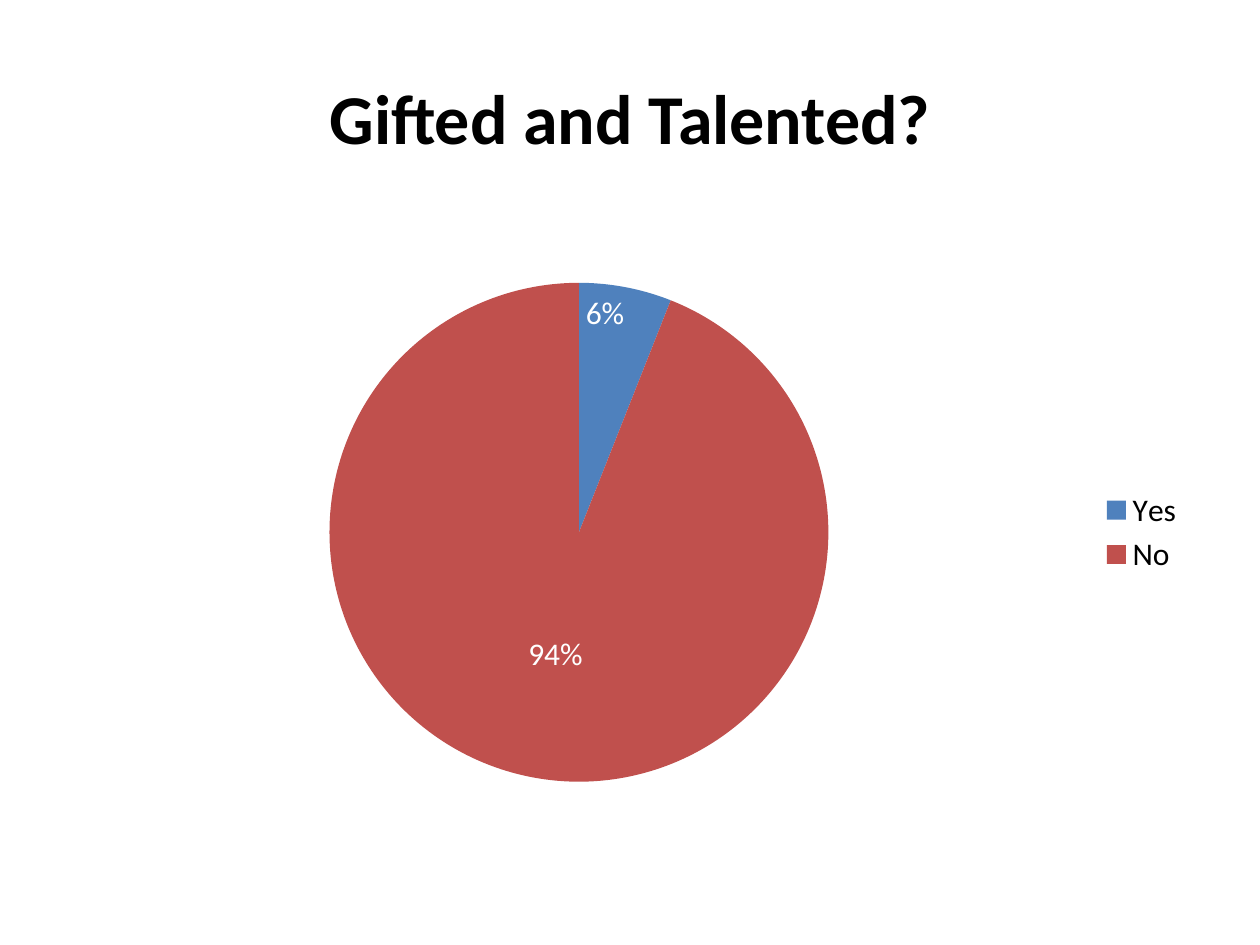
from dataclasses import dataclass

from lxml.etree import SubElement
from pptx import Presentation
from pptx.chart.chart import Chart
from pptx.chart.data import CategoryChartData
from pptx.dml.color import RGBColor
from pptx.enum.chart import XL_CHART_TYPE, XL_LABEL_POSITION, XL_LEGEND_POSITION
from pptx.enum.text import MSO_ANCHOR, PP_ALIGN
from pptx.oxml.ns import qn
from pptx.slide import Slide
from pptx.text.text import Font
from pptx.util import Inches, Pt


@dataclass(frozen=True)
class Theme:
    font: str = "Calibri"
    text: str = "000000"
    label: str = "FFFFFF"
    title_size: int = 40
    chart_size: int = 18


@dataclass(frozen=True)
class Answer:
    name: str
    share: float
    color: str
    label_position: XL_LABEL_POSITION


THEME = Theme()
ANSWERS = (
    Answer("Yes", 0.06, "4F81BD", XL_LABEL_POSITION.INSIDE_END),
    Answer("No", 0.94, "C0504D", XL_LABEL_POSITION.CENTER),
)
PLOT_AREA = {"x": 0.23, "y": 0.1, "w": 0.45, "h": 0.8}


def format_font(font: Font, size: int, color: str, bold: bool = False) -> None:
    values = {"name": THEME.font, "size": Pt(size), "bold": bold}
    for name, value in values.items():
        setattr(font, name, value)
    font.color.rgb = RGBColor.from_string(color)


def add_title(page: Slide, text: str) -> None:
    title = page.shapes.title
    place = {"left": 0, "top": 0.3, "width": 10, "height": 1.25}
    for name, value in place.items():
        setattr(title, name, Inches(value))
    frame = title.text_frame
    frame.text = text
    frame.vertical_anchor = MSO_ANCHOR.MIDDLE
    para = frame.paragraphs[0]
    para.alignment = PP_ALIGN.CENTER
    format_font(para.runs[0].font, THEME.title_size, THEME.text, bold=True)


def place_plot(chart: Chart) -> None:
    """Fix the inner plot area, in fractions of the chart's size."""
    plot_area = chart.plots[0]._element.getparent()
    layout = plot_area.find(qn("c:layout"))
    if layout is None:
        layout = SubElement(plot_area, qn("c:layout"))
        plot_area.insert(0, layout)
    manual = SubElement(layout, qn("c:manualLayout"))
    settings = {"layoutTarget": "inner", "xMode": "edge", "yMode": "edge", **PLOT_AREA}
    for name, value in settings.items():
        SubElement(manual, qn(f"c:{name}")).set("val", str(value))


def add_pie(page: Slide) -> None:
    data = CategoryChartData(number_format="0%")
    data.categories = [answer.name for answer in ANSWERS]
    data.add_series("Series 1", [answer.share for answer in ANSWERS])
    chart = page.shapes.add_chart(
        XL_CHART_TYPE.PIE, Inches(0.5), Inches(1.75), Inches(9), Inches(4.95), data
    ).chart
    format_font(chart.font, THEME.chart_size, THEME.text)
    chart.has_title = False
    chart.has_legend = True
    chart.legend.position = XL_LEGEND_POSITION.RIGHT
    chart.legend.include_in_layout = False
    place_plot(chart)

    plot = chart.plots[0]
    plot.vary_by_categories = True
    series = plot.series[0]
    labels = series.data_labels
    labels.show_value = True
    labels.number_format = "0%"
    labels.number_format_is_linked = False
    format_font(labels.font, THEME.chart_size, THEME.label)
    for index, answer in enumerate(ANSWERS):
        point = series.points[index]
        point.format.fill.solid()
        point.format.fill.fore_color.rgb = RGBColor.from_string(answer.color)
        format_font(point.data_label.font, THEME.chart_size, THEME.label)
        point.data_label.position = answer.label_position


def main() -> None:
    deck = Presentation()
    deck.slide_width, deck.slide_height = Inches(10), Inches(7.5)
    page = deck.slides.add_slide(deck.slide_layouts[5])
    add_title(page, "Gifted and Talented?")
    add_pie(page)
    deck.save("out.pptx")


if __name__ == "__main__":
    main()
